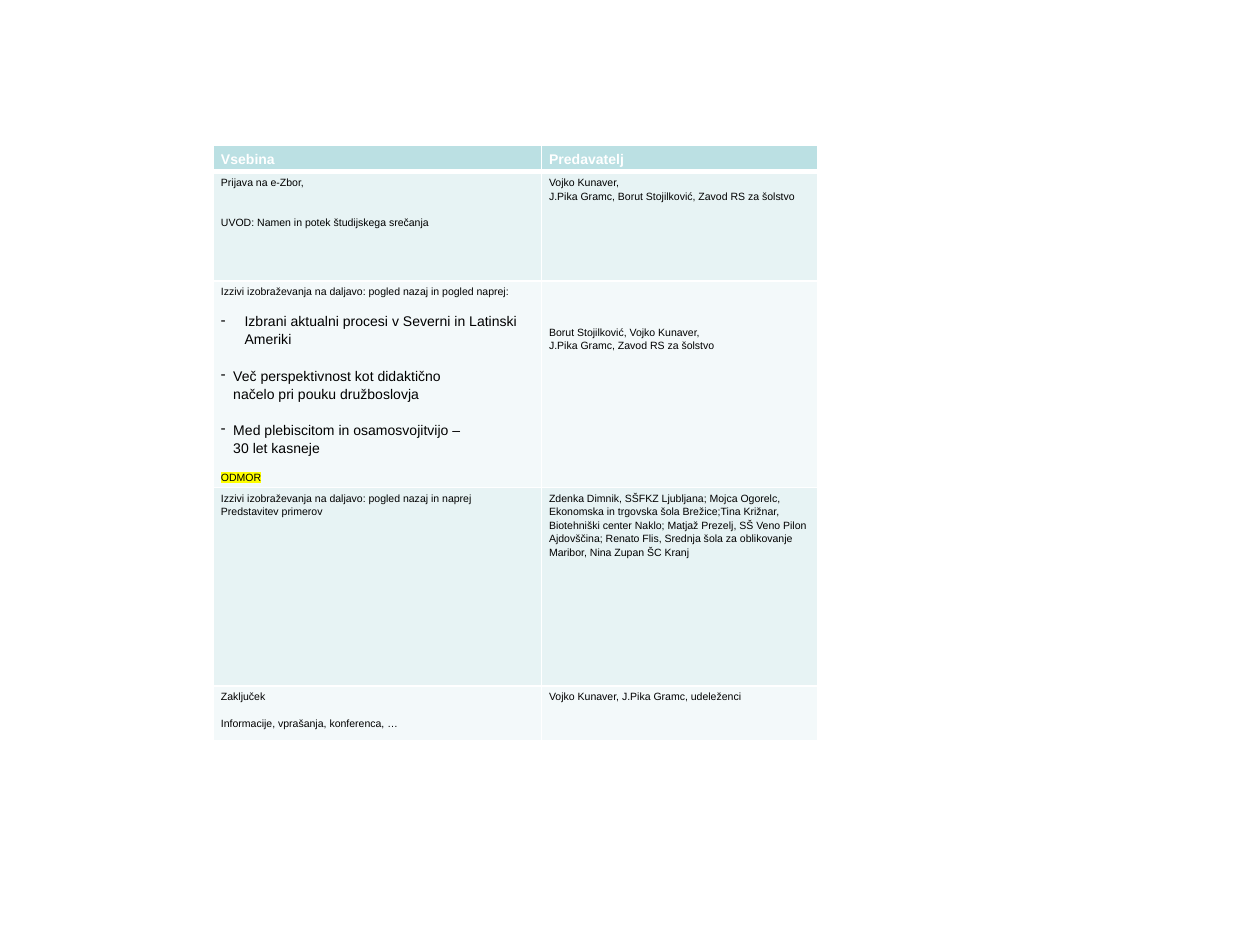
from lxml.etree import SubElement
from pptx import Presentation
from pptx.dml.color import RGBColor
from pptx.oxml.ns import qn
from pptx.util import Pt

WHITE = RGBColor(0xFF, 0xFF, 0xFF)
BLACK = RGBColor(0x00, 0x00, 0x00)
HEADER_TEAL = RGBColor(0xBB, 0xE0, 0xE3)
BANDS = (RGBColor(0xE7, 0xF3, 0xF4), RGBColor(0xF3, 0xF9, 0xFA))
YELLOW = RGBColor(0xFF, 0xFF, 0x00)

SMALL, LARGE = 6, 8
SMALL_LINE, LARGE_LINE = 7.7, 10.3  # height of one text line

# Content: a paragraph is its text and any settings that differ from the default
HEADINGS = ("Vsebina", "Predavatelj")
SESSIONS = [
    (
        [("Prijava na e-Zbor,", {}),
         ("UVOD: Namen in potek študijskega srečanja", {"before": 2 * SMALL_LINE})],
        [("Vojko Kunaver,", {}),
         ("J.Pika Gramc, Borut Stojilković, Zavod RS za šolstvo", {})],
    ),
    (
        [("Izzivi izobraževanja na daljavo: pogled nazaj in pogled naprej:", {}),
         ("Izbrani aktualni procesi v Severni in Latinski Ameriki",
          {"size": LARGE, "before": SMALL_LINE, "hang": 13.5}),
         ("Več perspektivnost kot didaktično\vnačelo pri pouku družboslovja",
          {"size": LARGE, "before": LARGE_LINE, "hang": 7}),
         ("Med plebiscitom in osamosvojitvijo –\v30 let kasneje",
          {"size": LARGE, "before": LARGE_LINE, "hang": 7}),
         ("ODMOR", {"before": SMALL_LINE, "highlight": YELLOW})],
        [("Borut Stojilković, Vojko Kunaver,", {}),
         ("J.Pika Gramc, Zavod RS za šolstvo", {})],
    ),
    (
        [("Izzivi izobraževanja na daljavo: pogled nazaj in naprej", {}),
         ("Predstavitev primerov", {})],
        [("Zdenka Dimnik, SŠFKZ Ljubljana; Mojca Ogorelc, Ekonomska in trgovska "
          "šola Brežice;Tina Križnar, Biotehniški center Naklo; Matjaž Prezelj, "
          "SŠ Veno Pilon Ajdovščina; Renato Flis, Srednja šola za oblikovanje "
          "Maribor, Nina Zupan ŠC Kranj", {})],
    ),
    (
        [("Zaključek", {}),
         ("Informacije, vprašanja, konferenca, …", {"before": SMALL_LINE})],
        [("Vojko Kunaver, J.Pika Gramc, udeleženci", {})],
    ),
]

LEFT, TOP = 122, 83
COLUMN_WIDTHS = (187.5, 158)
ROW_HEIGHTS = (15, 62.5, 118, 113.5, 31.5)
MARGIN_X, MARGIN_Y = 4.3, 2.2
LOWERED = {(2, 1): 3 * SMALL_LINE}  # cells whose text starts further down


def add_border(cell, side, width):
    line = SubElement(cell._tc.get_or_add_tcPr(), qn(f"a:ln{side}"), w=str(Pt(width)))
    fill = SubElement(line, qn("a:solidFill"))
    SubElement(fill, qn("a:srgbClr"), val=str(WHITE))


def add_dash(paragraph, hang):
    properties = paragraph._p.get_or_add_pPr()
    properties.set("marL", str(Pt(hang)))
    properties.set("indent", str(-Pt(hang)))
    SubElement(properties, qn("a:buChar"), char="-")


def write_paragraph(paragraph, text, size=SMALL, before=0, hang=0, highlight=None,
                    color=BLACK, bold=False):
    paragraph.text = text
    if hang:
        add_dash(paragraph, hang)
    paragraph.line_spacing = 1.15
    paragraph.space_before = Pt(before)
    font = paragraph.font
    font.name, font.size, font.bold = "Arial", Pt(size), bold
    font.color.rgb = color
    if highlight:
        mark = SubElement(paragraph.runs[0]._r.get_or_add_rPr(), qn("a:highlight"))
        SubElement(mark, qn("a:srgbClr"), val=str(highlight))


def fill_cell(cell, paragraphs, color, bottom_border=1, lowered=0):
    for side in "LRT":
        add_border(cell, side, 1)
    add_border(cell, "B", bottom_border)
    cell.fill.solid()
    cell.fill.fore_color.rgb = color
    cell.margin_left = cell.margin_right = Pt(MARGIN_X)
    cell.margin_top, cell.margin_bottom = Pt(MARGIN_Y + lowered), Pt(MARGIN_Y)
    frame = cell.text_frame
    for index, (text, settings) in enumerate(paragraphs):
        paragraph = frame.add_paragraph() if index else frame.paragraphs[0]
        write_paragraph(paragraph, text, **settings)


def main():
    presentation = Presentation()
    presentation.slide_width, presentation.slide_height = Pt(720), Pt(540)
    slide = presentation.slides.add_slide(presentation.slide_layouts[6])

    # Programme grid
    programme = slide.shapes.add_table(
        len(ROW_HEIGHTS), len(COLUMN_WIDTHS), Pt(LEFT), Pt(TOP),
        Pt(sum(COLUMN_WIDTHS)), Pt(sum(ROW_HEIGHTS))).table
    programme.horz_banding = False
    for column, width in zip(programme.columns, COLUMN_WIDTHS):
        column.width = Pt(width)
    for row, height in zip(programme.rows, ROW_HEIGHTS):
        row.height = Pt(height)

    # Headings
    heading_style = {"size": LARGE, "color": WHITE, "bold": True}
    for column, heading in enumerate(HEADINGS):
        fill_cell(programme.cell(0, column), [(heading, heading_style)],
                  HEADER_TEAL, bottom_border=3)

    # Sessions
    for row, session in enumerate(SESSIONS, start=1):
        for column, paragraphs in enumerate(session):
            fill_cell(programme.cell(row, column), paragraphs, BANDS[(row - 1) % 2],
                      bottom_border=1, lowered=LOWERED.get((row, column), 0))

    presentation.save("out.pptx")


if __name__ == "__main__":
    main()
